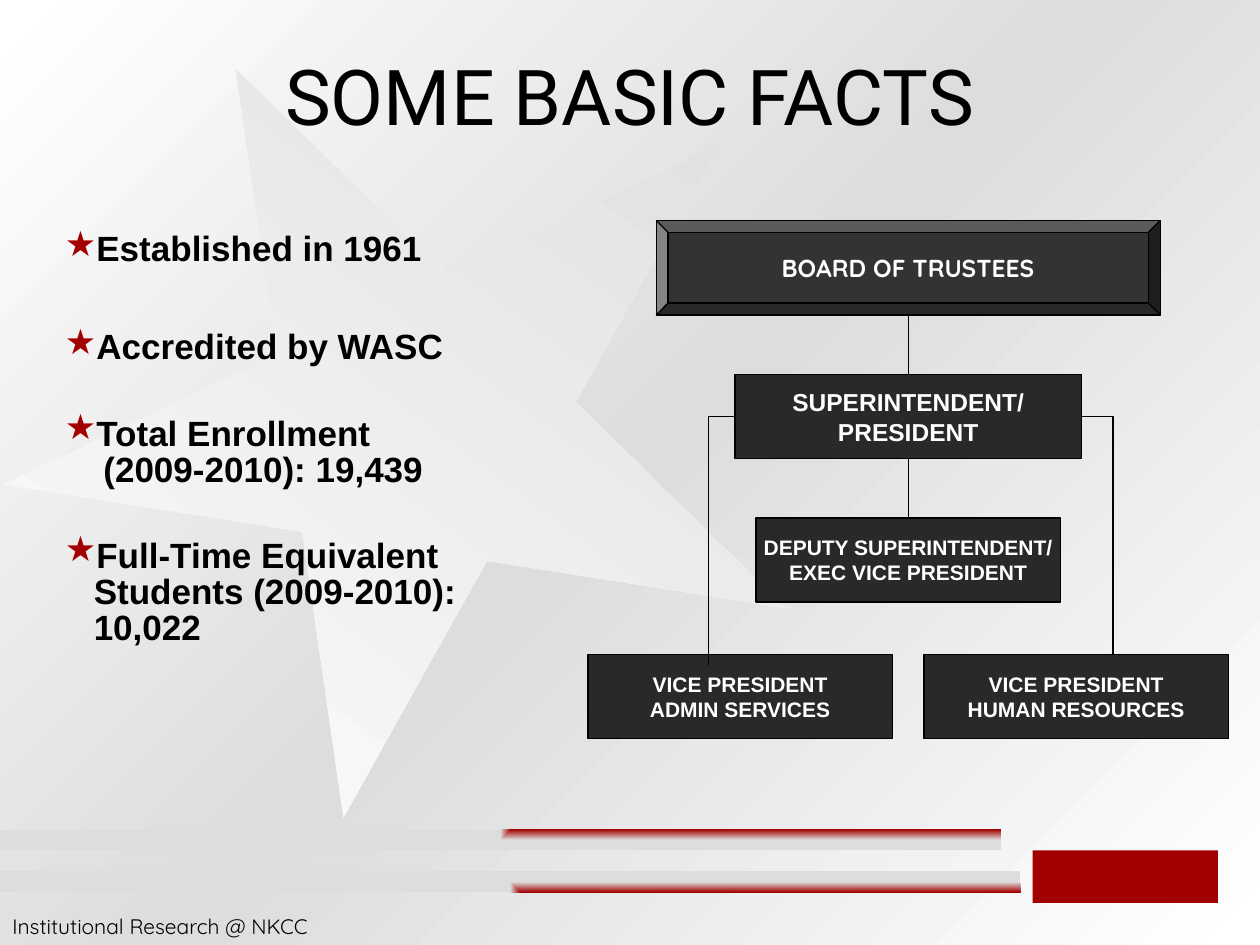
"""Build the basic facts slide with its organisation chart."""
import lxml.etree
import pptx
import pptx.dml.color
import pptx.enum.shapes
import pptx.enum.text
import pptx.oxml
import pptx.oxml.ns
import pptx.util

Pt = pptx.util.Pt
qn = pptx.oxml.ns.qn
SHAPE = pptx.enum.shapes.MSO_SHAPE
CONNECTOR = pptx.enum.shapes.MSO_CONNECTOR
ALIGN = pptx.enum.text.PP_ALIGN
ANCHOR = pptx.enum.text.MSO_ANCHOR

THEME = {
    "white": "FFFFFF", "black": "000000", "grey": "DDDDDD",
    "red": "A20000", "board": "333333", "staff": "292929",
    "title": 44, "body": 20, "lead": 14, "small": 12, "line": 0.75,
    "sans": "Arial", "round": "Quicksand", "heading": "Roboto",
}

FACTS = [
    ("Established in 1961", [], 0),
    ("Accredited by WASC", [], 0),
    ("Total Enrollment", ["(2009-2010): 19,439"], 22),
    ("Full-Time Equivalent", ["Students (2009-2010):", "10,022"], 16.5),
]
FIRST_GAP, FACT_GAP, DETAIL_GAP, BULLET_INDENT = 4.7, 32, 4, 18

CENTER = 519
OFFICES = {
    "board": ("BOARD OF TRUSTEES", CENTER, 126, 288, 54, "lead"),
    "president": ("SUPERINTENDENT/\vPRESIDENT", CENTER, 214, 198, 48, "lead"),
    "deputy": ("DEPUTY SUPERINTENDENT/\vEXEC VICE PRESIDENT", CENTER, 296, 174, 48, "small"),
    "resources": ("VICE PRESIDENT\nHUMAN RESOURCES", CENTER + 96, 374, 174, 48, "small"),
    "services": ("VICE PRESIDENT\vADMIN SERVICES", CENTER - 96, 374, 174, 48, "small"),
}
REPORTS = [("board", "president"), ("president", "deputy")]
BRANCHES = [(420, 405, 380), (618, 636, 374)]
BRANCH_TOP = 238

DIAGONAL = '<a:lin ang="2700000" scaled="1"/>'
CORNER = '<a:path path="rect"><a:fillToRect {}/></a:path>'
BARS = [
    (498, 583, 'l="100000" t="100000"'),
    (474, 572, 'l="100000" b="100000"'),
]


def color(name):
    return pptx.dml.color.RGBColor.from_string(THEME[name])


def paint_gradient(fill, element, names, direction):
    fill.solid()
    stops = "".join(
        f'<a:gs pos="{100000 * i // (len(names) - 1)}"><a:srgbClr val="{THEME[name]}"/></a:gs>'
        for i, name in enumerate(names))
    gradient = pptx.oxml.parse_xml(
        f'<a:gradFill {pptx.oxml.ns.nsdecls("a")} rotWithShape="1">'
        f"<a:gsLst>{stops}</a:gsLst>{direction}</a:gradFill>")
    solid = element.find(".//" + qn("a:solidFill"))
    solid.getparent().replace(solid, gradient)


def style_text(frame, size, font, ink="black", bold=False, align=ALIGN.LEFT):
    for para in frame.paragraphs:
        para.alignment = align
        for span in para.runs:
            span.font.size = Pt(THEME[size])
            span.font.name = THEME[font]
            span.font.bold = bold
            span.font.color.rgb = color(ink)


def add_shape(page, kind, *place):
    shape = page.shapes.add_shape(kind, *map(Pt, place))
    shape.shadow.inherit = False
    return shape


def add_label(page, text, place, *style, **options):
    box = page.shapes.add_textbox(*map(Pt, place))
    box.text_frame.word_wrap = True
    box.text_frame.text = text
    style_text(box.text_frame, *style, **options)
    return box


def add_backdrop(page):
    paint_gradient(page.background.fill, page.element, ["white", "grey", "white"], DIAGONAL)
    star = add_shape(page, SHAPE.STAR_5_POINT, 0, 30, 432, 432)
    star.rotation = 261.8
    star.line.fill.background()
    paint_gradient(star.fill, star.element, ["white", "grey"], DIAGONAL)
    add_label(page, "Institutional Research @ NKCC", (0, 518.4, 288, 21.6), "small", "round")
    block = add_shape(page, SHAPE.RECTANGLE, 590, 486, 106, 30)
    block.line.fill.background()
    block.fill.solid()
    block.fill.fore_color.rgb = color("red")
    for top, width, corner in BARS:
        bar = add_shape(page, SHAPE.RECTANGLE, 0, top, width, 12)
        bar.line.fill.background()
        paint_gradient(bar.fill, bar.element, ["red", "grey"], CORNER.format(corner))


def add_bullet(para):
    props = para._p.get_or_add_pPr()
    tint = lxml.etree.SubElement(props, qn("a:buClr"))
    lxml.etree.SubElement(tint, qn("a:srgbClr"), val=THEME["red"])
    lxml.etree.SubElement(props, qn("a:buChar"), char="★")


def add_facts(page):
    lines = []
    for fact, details, indent in FACTS:
        gap = FACT_GAP if lines else FIRST_GAP
        lines.append((fact, True, BULLET_INDENT, 0.7 if details else 1, gap))
        lines += [(detail, False, indent, 0.7, DETAIL_GAP) for detail in details]
    box = add_label(page, "\n".join(line[0] for line in lines), (30, 126, 270, 336),
                    "body", "sans", bold=True)
    for para, line in zip(box.text_frame.paragraphs, lines):
        _, starred, indent, spacing, gap = line
        para.line_spacing = spacing
        para.space_before = Pt(gap)
        props = para._p.get_or_add_pPr()
        props.set("marL", str(Pt(indent)))
        props.set("indent", str(Pt(-indent if starred else 0)))
        if starred:
            add_bullet(para)


def add_office(page, name):
    text, center, top, width, height, size = OFFICES[name]
    is_board = name == "board"
    kind = SHAPE.BEVEL if is_board else SHAPE.RECTANGLE
    box = add_shape(page, kind, center - width / 2, top, width, height)
    if is_board:
        box.adjustments[0] = 0.125
    box.fill.solid()
    box.fill.fore_color.rgb = color("board" if is_board else "staff")
    box.line.color.rgb = color("black")
    box.line.width = Pt(THEME["line"])
    frame = box.text_frame
    frame.text = text
    frame.word_wrap = False
    frame.vertical_anchor = ANCHOR.MIDDLE
    style_text(frame, size, "round" if is_board else "sans", "white", True, ALIGN.CENTER)
    return box


def add_link(page, kind, *ends):
    link = page.shapes.add_connector(kind, *map(Pt, ends))
    link.line.color.rgb = color("black")
    link.line.width = Pt(THEME["line"])
    lxml.etree.SubElement(link.element.spPr, qn("a:effectLst"))
    return link


def add_chart_of_offices(page):
    boxes = {name: add_office(page, name) for name in OFFICES}
    for upper, lower in REPORTS:
        start = OFFICES[upper][2] + OFFICES[upper][4]
        link = add_link(page, CONNECTOR.STRAIGHT, CENTER, start, CENTER, OFFICES[lower][2])
        link.begin_connect(boxes[upper], 2)
        link.end_connect(boxes[lower], 0)
    for side, drop, bottom in BRANCHES:
        link = add_link(page, CONNECTOR.ELBOW, side, BRANCH_TOP, drop, bottom)
        link.element.spPr.find(qn("a:prstGeom")).set("prst", "bentConnector2")


def main():
    deck = pptx.Presentation()
    deck.slide_width, deck.slide_height = Pt(720), Pt(540)
    page = deck.slides.add_slide(deck.slide_layouts[6])
    add_backdrop(page)
    title = add_label(page, "SOME BASIC FACTS", (36, 18, 648, 72),
                      "title", "heading", align=ALIGN.CENTER)
    title.text_frame.vertical_anchor = ANCHOR.MIDDLE
    add_facts(page)
    add_chart_of_offices(page)
    deck.save("out.pptx")


if __name__ == "__main__":
    main()
